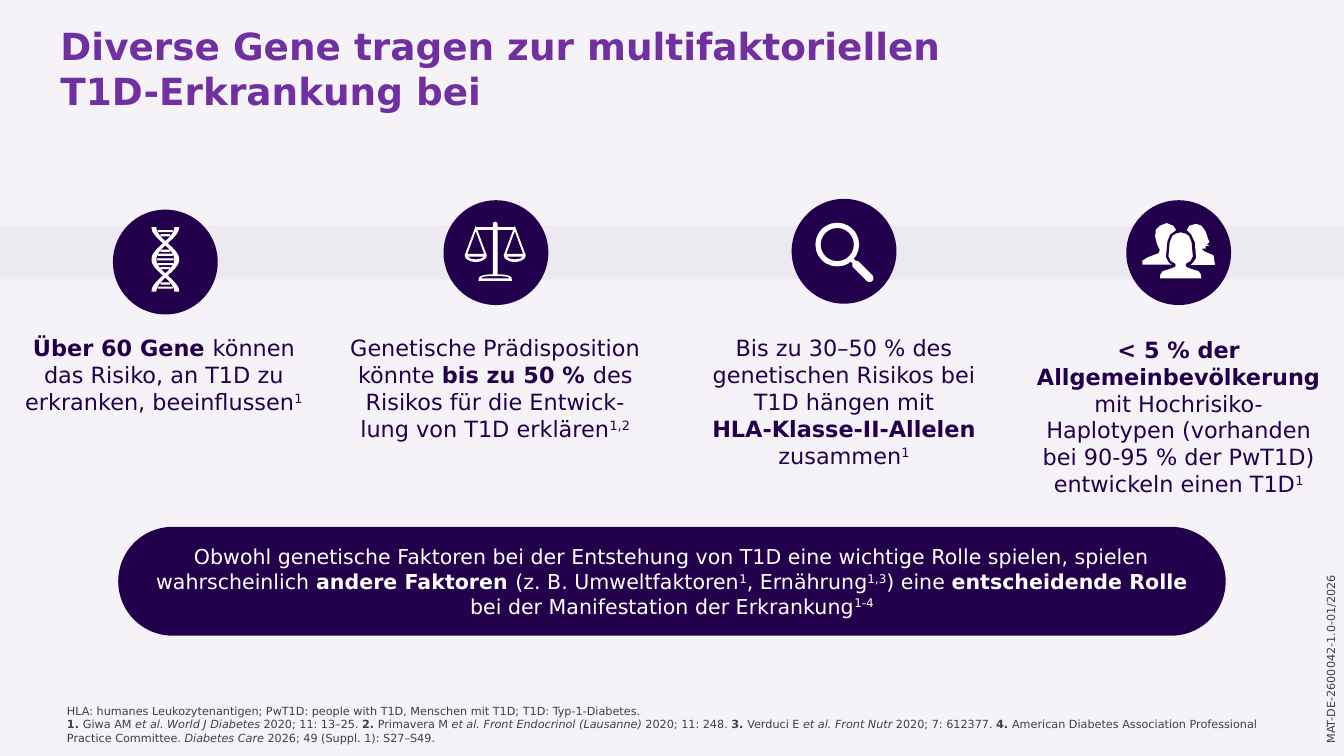
"""Build a slide on the genetic and other factors that contribute to type 1 diabetes."""
from math import cos, pi, sin

from lxml.etree import SubElement
from pptx import Presentation
from pptx.dml.color import RGBColor
from pptx.enum.shapes import MSO_SHAPE
from pptx.enum.text import MSO_ANCHOR, MSO_AUTO_SIZE, PP_ALIGN
from pptx.oxml.ns import qn
from pptx.util import Inches, Pt

NAVY = RGBColor(0x23, 0x00, 0x4C)
PURPLE = RGBColor(0x70, 0x30, 0xA0)
LILAC = RGBColor(0xDC, 0xD5, 0xE2)
PALE = RGBColor(0xF5, 0xF3, 0xF8)
GRAY = RGBColor(0x40, 0x40, 0x40)
WHITE = RGBColor(0xFF, 0xFF, 0xFF)
PLAIN, BOLD, ITALIC, RAISED = {}, {"bold": True}, {"italic": True}, {"raised": True}

deck = Presentation()
deck.slide_width, deck.slide_height = Inches(10), Inches(5.625)
UNIT = deck.slide_width / 100
page = deck.slides.add_slide(deck.slide_layouts[5])
page.background.fill.solid()
page.background.fill.fore_color.rgb = PALE


def add_span(para, text, size=12, color=NAVY, bold=False, italic=False, raised=False):
    if text == "\n":
        para.add_line_break()
        SubElement(para._p[-1], qn("a:rPr"), sz=str(size * 100))
        return
    span = para.add_run()
    span.text = text
    span.font.name, span.font.size = "DejaVu Sans", Pt(size)
    span.font.bold, span.font.italic = bold, italic
    span.font.color.rgb = color
    if raised:
        span.font._element.set("baseline", "30000")


def add_outline(*contours):
    builder = None
    for contour in contours:
        points = [(100 * x, 100 * y) for x, y in contour]
        if builder is None:
            builder = page.shapes.build_freeform(*points[0], scale=UNIT / 100)
        else:
            builder.move_to(*points[0])
        builder.add_line_segments(points[1:], close=True)
    shape = builder.convert_to_shape()
    shape.shadow.inherit = False
    shape.fill.solid()
    shape.fill.fore_color.rgb = WHITE
    shape.line.fill.background()
    return shape


ROUND, OVAL, RING = MSO_SHAPE.ROUNDED_RECTANGLE, MSO_SHAPE.OVAL, MSO_SHAPE.DONUT
CIRCLES = [(12.3, 19.5), (36.9, 18.8), (62.8, 18.7), (87.7, 18.8)]
HELIX_X, HELIX_Y = 12.3, 19.3
RUNGS = [(1.3, 0), (1.2, 0.35), (0.75, 0.65), (0.75, 1.8), (1.15, 2.1)]
POST_X = 36.85

plain_shapes = [
    (MSO_SHAPE.RECTANGLE, 50, 18.8, 100, 4, 0, None, LILAC),
    (ROUND, 50, 43.25, 82.4, 8.1, 0, 0.5, NAVY),
]
plain_shapes += [(OVAL, x, y, 7.8, 7.8, 0, None, NAVY) for x, y in CIRCLES]
plain_shapes += [
    (ROUND, HELIX_X, HELIX_Y + side * offset, width, 0.16, 0, 0.5, WHITE)
    for width, offset in RUNGS
    for side in ((-1, 1) if offset else (1,))
]
plain_shapes += [
    (ROUND, POST_X, 18.5, 0.36, 4, 0, 0.5, WHITE),
    (ROUND, POST_X, 17, 3, 0.2, 0, 0.5, WHITE),
    (RING, 62.3, 18.2, 3.25, 3.25, 0, 0.12, WHITE),
    (ROUND, 63.45, 19.4, 0.8, 0.3, 45, 0.2, WHITE),
    (ROUND, 64.2, 20.2, 2, 0.6, 45, 0.5, WHITE),
]
for kind, x, y, width, height, rotation, corner, color in plain_shapes:
    shape = page.shapes.add_shape(
        kind, *(round(UNIT * n) for n in (x - width / 2, y - height / 2, width, height)))
    shape.shadow.inherit = False
    shape.rotation = rotation
    shape.fill.solid()
    shape.fill.fore_color.rgb = color
    shape.line.fill.background()
    if corner is not None:
        shape.adjustments[0] = corner
    if color == LILAC:
        tint = shape.fill._xPr.find(qn("a:solidFill"))[0]
        SubElement(tint, qn("a:alpha"), val="30000")
    if width == 82.4:
        pill = shape

heights = [step / 10 for step in range(-24, 25)]
for side in (-1, 1):
    strand = [(HELIX_X + side * 0.85 * cos(2 * pi * y / 4.8), HELIX_Y + y) for y in heights]
    add_outline([(x - 0.18, y) for x, y in strand] + [(x + 0.18, y) for x, y in strand[::-1]])

arc = [(cos(step * pi / 12), sin(step * pi / 12)) for step in range(13)]
for x in (POST_X - 1.45, POST_X + 1.45):
    add_outline(
        [(x, 16.8)] + [(x + 0.82 * dx, 19 + 0.5 * dy) for dx, dy in arc],
        [(x, 17.2), (x + 0.62, 18.9), (x - 0.62, 18.9)],
        [(x + 0.55 * dx, 19.1 + 0.2 * dy) for dx, dy in arc],
    )
add_outline(
    [(POST_X + 1.25 * dx, 20.9 - 0.5 * abs(dy) ** 0.5) for dx, dy in arc],
    [(POST_X + 1.02 * dx, 20.72 - 0.18 * abs(dy) ** 0.5) for dx, dy in arc],
)

add_outline([
    (85, 19.7), (85, 19.4), (85.4, 19.15), (86.2, 18.85), (86.3, 18.6), (86.1, 18.2),
    (85.95, 17.6), (86, 17.1), (86.3, 16.8), (86.8, 16.6), (87.3, 16.8), (87.5, 17.1),
    (87.2, 17.5), (87, 18), (86.8, 19.2), (87, 19.5), (87.2, 19.7)])
add_outline([
    (90.4, 19.7), (90.3, 19), (89.6, 18.7), (89.4, 18.5), (89.7, 18.5), (89.7, 18.3),
    (90, 18.3), (89.8, 18.2), (90, 18), (89.9, 17.8), (89.7, 17.2), (89.4, 16.8),
    (89, 16.65), (88.5, 16.8), (88.3, 17.1), (88.6, 17.4), (88.9, 18), (89, 19.2),
    (88.8, 19.5), (88.6, 19.7)])
half_person = [
    (0, 17.2), (0.4, 17.3), (0.7, 17.5), (0.9, 18), (1, 19.1), (0.8, 19.5), (0.45, 19.7),
    (0.5, 19.8), (0.9, 19.95), (1.4, 20.1), (1.6, 20.4), (1.65, 20.8)]
front_person = add_outline(
    [(87.85 + x, y) for x, y in half_person] + [(87.85 - x, y) for x, y in half_person[::-1]])
front_person.line.color.rgb = NAVY
front_person.line.width = Pt(1.25)

title_text = [[("Diverse Gene tragen zur multifaktoriellen T1D-Erkrankung bei", BOLD)]]
pill_text = [[
    ("Obwohl genetische Faktoren bei der Entstehung von T1D eine wichtige Rolle spielen, "
     "spielen wahrscheinlich ", PLAIN),
    ("andere Faktoren ", BOLD), ("(z. B. Umweltfaktoren", PLAIN), ("1", RAISED),
    (", Ernährung", PLAIN), ("1,3", RAISED), (") eine ", PLAIN),
    ("entscheidende Rolle ", BOLD), ("bei der Manifestation der Erkrankung", PLAIN),
    ("1-4", RAISED)]]
gene_text = [[
    ("Über 60 Gene ", BOLD), ("können das Risiko, an T1D zu erkranken, beeinflussen", PLAIN),
    ("1", RAISED)]]
predisposition_text = [[
    ("Genetische Prädisposition könnte ", PLAIN), ("bis zu 50 % ", BOLD),
    ("des Risikos für die Entwick-lung von T1D erklären", PLAIN), ("1,2", RAISED)]]
allele_text = [[
    ("Bis zu 30–50 % des genetischen Risikos bei T1D hängen mit", PLAIN), ("\n", PLAIN),
    ("HLA-Klasse-II-Allelen", BOLD), (" zusammen", PLAIN), ("1", RAISED)]]
population_text = [[
    ("< 5 % der Allgemeinbevölkerung ", BOLD),
    ("mit Hochrisiko-Haplotypen (vorhanden bei 90-95 % der PwT1D) entwickeln einen T1D", PLAIN),
    ("1", RAISED)]]
reference_text = [
    [("HLA: humanes Leukozytenantigen; PwT1D: people with T1D, Menschen mit T1D; "
      "T1D: Typ-1-Diabetes.", PLAIN)],
    [("1. ", BOLD), ("Giwa AM ", PLAIN), ("et al. World J Diabetes ", ITALIC),
     ("2020; 11: 13–25. ", PLAIN), ("2.", BOLD), (" Primavera M ", PLAIN),
     ("et al. Front Endocrinol (Lausanne) ", ITALIC), ("2020; 11: 248. ", PLAIN),
     ("3. ", BOLD), ("Verduci E ", PLAIN), ("et al. Front Nutr ", ITALIC),
     ("2020; 7: 612377. ", PLAIN), ("4. ", BOLD),
     ("American Diabetes Association Professional Practice Committee. ", PLAIN),
     ("Diabetes Care ", ITALIC), ("2026; 49 (Suppl. 1): S27–S49.", PLAIN)]]
code_text = [[("MAT-DE-2600042-1.0-01/2026", PLAIN)]]

title = page.shapes.title
code, references, genes, predisposition, alleles, population = (
    page.shapes.add_textbox(0, 0, 0, 0) for _ in range(6))
LEFT, CENTER = PP_ALIGN.LEFT, PP_ALIGN.CENTER
TOP, MIDDLE = MSO_ANCHOR.TOP, MSO_ANCHOR.MIDDLE
for box, place, paragraphs, size, color, align, anchor in [
    (title, (4, 1.2, 72.8, 5.1), title_text, 20, PURPLE, LEFT, TOP),
    (pill, (8.8, 39.2, 82.4, 8.1), pill_text, 11, WHITE, CENTER, MIDDLE),
    (genes, (0.7, 24.4, 23, 7.1), gene_text, 12, NAVY, CENTER, TOP),
    (predisposition, (24.7, 24.4, 24.3, 9.1), predisposition_text, 12, NAVY, CENTER, TOP),
    (alleles, (51.2, 24.4, 23.2, 11.1), allele_text, 12, NAVY, CENTER, TOP),
    (population, (76.1, 24.5, 23.2, 13.1), population_text, 12, NAVY, CENTER, TOP),
    (references, (4, 51.9, 92.1, 4), reference_text, 6, GRAY, LEFT, TOP),
    (code, (91.3, 47.6, 15.4, 2), code_text, 6, GRAY, LEFT, MIDDLE),
]:
    box.left, box.top, box.width, box.height = (round(UNIT * n) for n in place)
    frame = box.text_frame
    frame.word_wrap = box is not code
    frame.auto_size = MSO_AUTO_SIZE.NONE
    frame.vertical_anchor = anchor
    for number, spans in enumerate(paragraphs):
        para = frame.add_paragraph() if number else frame.paragraphs[0]
        para.alignment = align
        for text, style in spans:
            add_span(para, text, size=size, color=color, **style)

title.text_frame.margin_left = title.text_frame.margin_right = Inches(0.05)
code.rotation = 270
deck.save("out.pptx")
